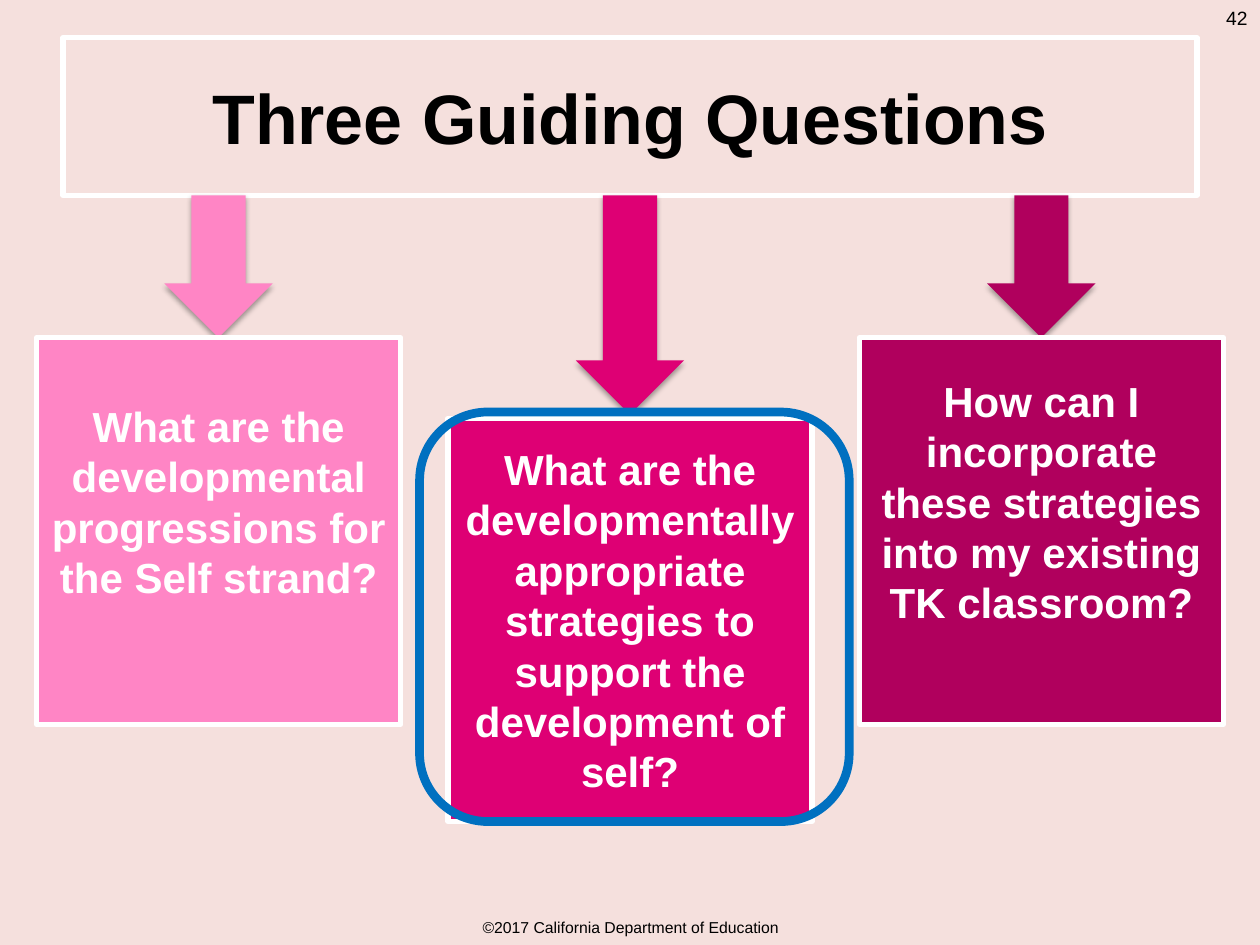
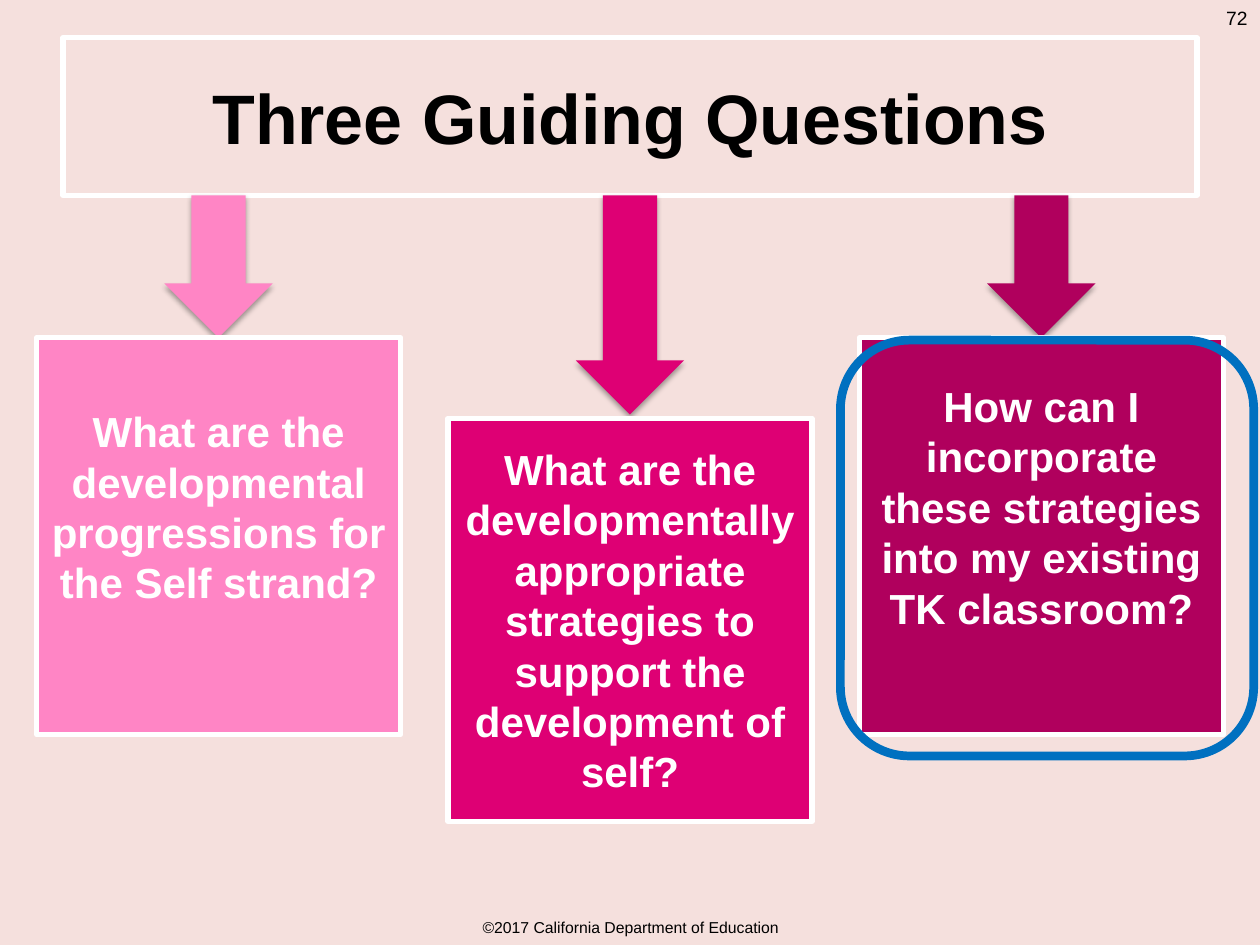
from pptx import Presentation
from pptx.dml.color import RGBColor
from pptx.enum.shapes import MSO_SHAPE as Shape
from pptx.enum.text import MSO_ANCHOR as Anchor, PP_ALIGN as Align
from pptx.oxml import parse_xml
from pptx.oxml.ns import nsdecls, qn
from pptx.util import Inches, Pt

WIDTH, HEIGHT = 10, 7.5
COLORS = {
    "background": "F5E0DD", "text": "000000", "white": "FFFFFF", "ring": "0070C0",
    "light pink": "FF85C5", "pink": "DE0074", "dark pink": "B0005D",
}
TITLE = "Three Guiding Questions"
FOOTER = "©2017 California Department of Education"
QUESTIONS = [
    ("What are the developmental progressions for the Self strand?", "light pink"),
    ("What are the developmentally appropriate strategies to support "
     "the development of self?", "pink"),
    ("How can I incorporate these strategies into my existing TK classroom?", "dark pink"),
]
SLIDES = [
    {"number": "42", "side_height": 3.07, "ring": (3.33, 3.27, 3.41, 3.25)},
    {"number": "72", "side_height": 3.15, "ring": (6.67, 2.7, 3.28, 3.3)},
]

TITLE_BOX = (0.5, 0.3, WIDTH - 1, 1.25)
TITLE_BOTTOM = TITLE_BOX[1] + TITLE_BOX[3]
BOX_WIDTH, MARGIN = 2.89, 0.29
COLUMN_STEP = (WIDTH - 2 * MARGIN - BOX_WIDTH) / (len(QUESTIONS) - 1)
SIDE_TOP, MIDDLE_TOP, MIDDLE_HEIGHT = 2.68, 3.32, 3.2
SIDE_BOTTOM_INSET = 0.52
ARROW_WIDTH = 0.86


def color(name):
    return RGBColor.from_string(COLORS[name])


def inches(box):
    return [Inches(length) for length in box]


def write(shape, text, size, fill="text", bold=False, align=Align.CENTER,
          anchor=Anchor.MIDDLE, spacing=None, bottom=0.05):
    frame = shape.text_frame
    frame.word_wrap = True
    frame.vertical_anchor = anchor
    frame.margin_left = frame.margin_right = Inches(0.1)
    frame.margin_top, frame.margin_bottom = Inches(0.05), Inches(bottom)
    frame.text = text
    paragraph = frame.paragraphs[0]
    paragraph.alignment = align
    if spacing:
        paragraph.line_spacing = Pt(spacing)
    font = paragraph.runs[0].font
    font.name, font.size, font.bold = "Arial", Pt(size), bold
    font.color.rgb = color(fill)


def outline(shape, name, width):
    shape.line.color.rgb = color(name)
    shape.line.width = Pt(width)


def add_shape(slide, kind, box, fill=None):
    shape = slide.shapes.add_shape(kind, *inches(box))
    shape.shadow.inherit = False
    if fill:
        shape.fill.solid()
        shape.fill.fore_color.rgb = color(fill)
    else:
        shape.fill.background()
    return shape


def add_arrow(slide, center, bottom, fill):
    """Draw a shadowed arrow from the title down to a question box."""
    box = (center - ARROW_WIDTH / 2, TITLE_BOTTOM, ARROW_WIDTH, bottom - TITLE_BOTTOM)
    arrow = add_shape(slide, Shape.DOWN_ARROW, box, fill)
    arrow.line.fill.background()
    arrow._element.spPr.find(qn("a:effectLst")).append(parse_xml(
        f'<a:outerShdw {nsdecls("a")} blurRad="{Pt(3.1)}" dist="{Pt(1.8)}" dir="5400000" '
        'rotWithShape="0"><a:srgbClr val="000000"><a:alpha val="35000"/></a:srgbClr>'
        '</a:outerShdw>'))


def add_question(slide, column, side_height):
    text, fill = QUESTIONS[column]
    middle = column == 1
    left = MARGIN + column * COLUMN_STEP
    top = MIDDLE_TOP if middle else SIDE_TOP
    height = MIDDLE_HEIGHT if middle else side_height
    add_arrow(slide, left + BOX_WIDTH / 2, top - 0.03 if middle else top, fill)
    box = add_shape(slide, Shape.RECTANGLE, (left, top, BOX_WIDTH, height), fill)
    outline(box, "white", 3)
    write(box, text, 24, "white", bold=True, spacing=28.8,
          bottom=0.05 if middle else SIDE_BOTTOM_INSET)


def add_slide(presentation, number, side_height, ring):
    slide = presentation.slides.add_slide(presentation.slide_layouts[5])
    footer = slide.shapes.add_textbox(*inches((0.38, HEIGHT - 0.27, 9.25, 0.25)))
    write(footer, FOOTER, 9)
    for column in range(len(QUESTIONS)):
        add_question(slide, column, side_height)
    title = slide.shapes.title
    title.left, title.top, title.width, title.height = inches(TITLE_BOX)
    outline(title, "white", 3)
    write(title, TITLE, 40, bold=True)
    page = slide.shapes.add_textbox(*inches((WIDTH - 0.5, 0, 0.5, 0.4)))
    write(page, number, 11, align=Align.RIGHT, anchor=Anchor.TOP)
    outline(add_shape(slide, Shape.ROUNDED_RECTANGLE, ring), "ring", 5)


def main():
    presentation = Presentation()
    presentation.slide_width, presentation.slide_height = inches((WIDTH, HEIGHT))
    background = presentation.slide_master.background.fill
    background.solid()
    background.fore_color.rgb = color("background")
    for content in SLIDES:
        add_slide(presentation, **content)
    presentation.save("out.pptx")


if __name__ == "__main__":
    main()
